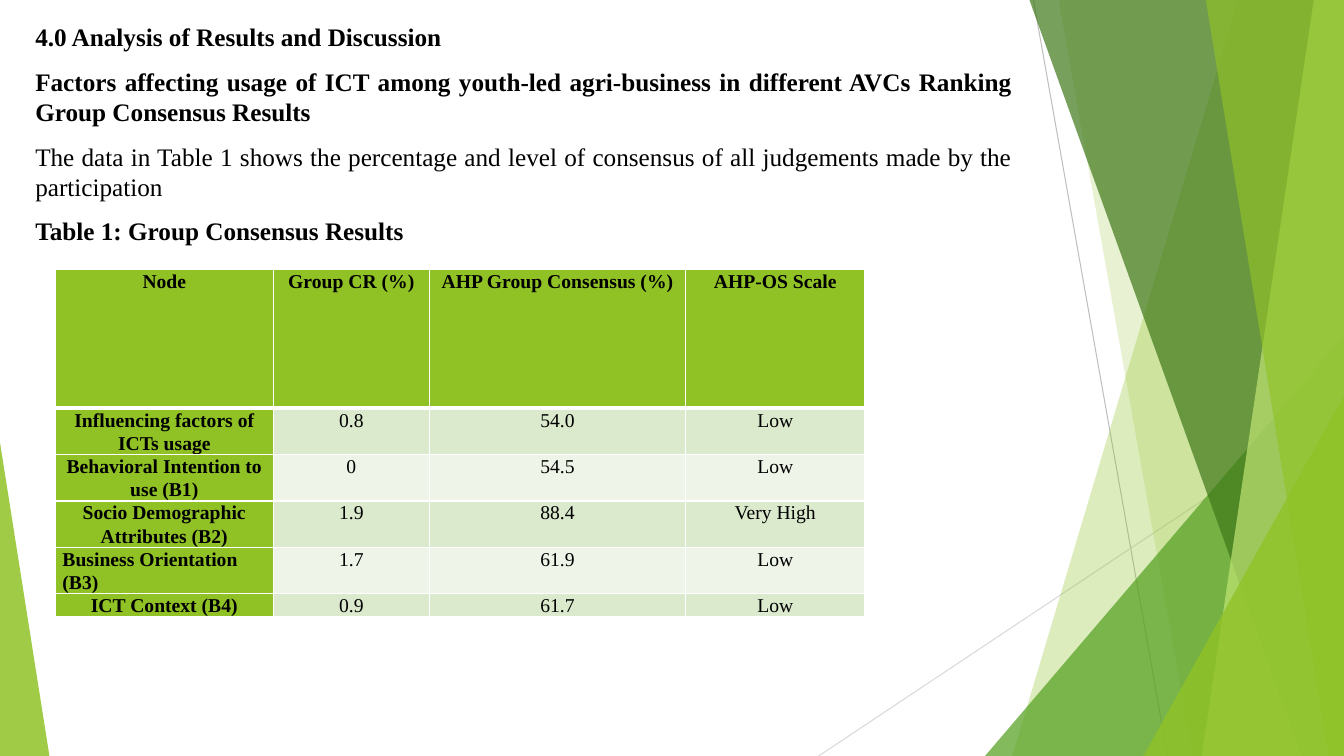
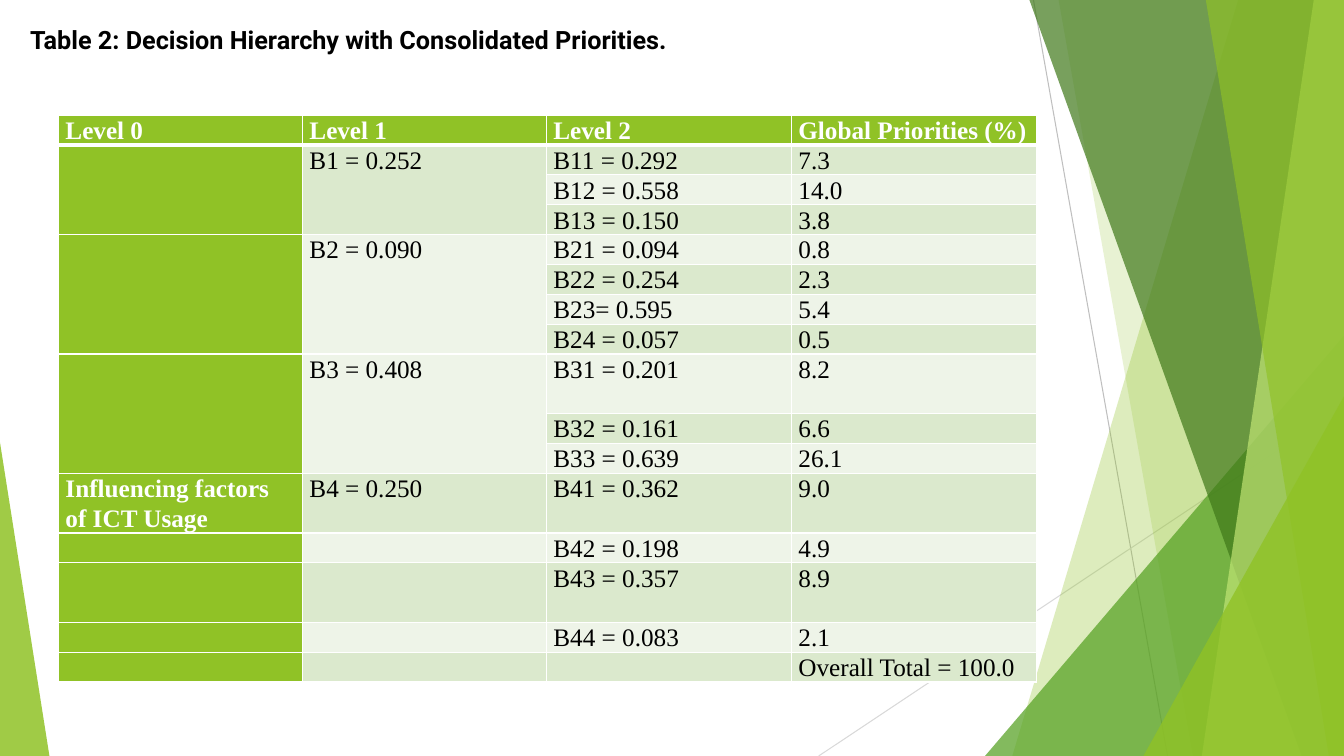
from lxml import etree
from pptx import Presentation
from pptx.dml.color import RGBColor
from pptx.enum.shapes import MSO_CONNECTOR, MSO_SHAPE
from pptx.enum.text import MSO_ANCHOR, MSO_AUTO_SIZE, PP_ALIGN
from pptx.oxml.ns import qn
from pptx.util import Inches, Pt

WIDTH, HEIGHT = 13.33, 7.5
SERIF, SANS = "Times New Roman", "Roboto"
BLACK, WHITE, LIME = "000000", "FFFFFF", "90C226"
BANDS = ["EEF4E8", "DBE9CD"]  # even rows, odd rows

# Thin lines: start, end, colour
RAYS = [
    ((10.25, 0), (11.58, HEIGHT), "BFBFBF"),
    ((WIDTH, 4.03), (8.12, HEIGHT), "D9D9D9"),
]
# Facets from back to front. A sheet has the x of its left edge at top and
# bottom and runs to the right side; a wedge has left, top, width, apex.
FACETS = [
    ("sheet", (12.28, 10.04), LIME, 30),
    ("sheet", (10.5, 11.83), LIME, 20),
    ("wedge", (9.77, 3.33, 3.56, 1), "54A021", 72),
    ("sheet", (10.21, 12.91), "3F7819", 70),
    ("sheet", (13.03, 11.92), "C0E474", 70),
    ("sheet", (11.96, 13.18), LIME, 65),
    ("wedge", (11.34, 3.93, 1.99, 1), LIME, 80),
    ("wedge", (0, 4.39, 0.49, 0), LIME, 85),
]

CONSENSUS_TITLE = "4.0 Analysis of Results and Discussion"
CONSENSUS_TEXT = [  # text, bold
    ("Factors affecting usage of ICT among youth-led agri-business in different "
     "AVCs Ranking Group Consensus Results", True),
    ("The data in Table 1 shows the percentage and level of consensus of all "
     "judgements made by the participation", False),
    ("Table 1: Group Consensus Results", True),
]
CONSENSUS = [
    ("Node", "Group CR (%)", "AHP Group Consensus (%)", "AHP-OS Scale"),
    ("Influencing factors of ICTs usage", "0.8", "54.0", "Low"),
    ("Behavioral Intention to use (B1)", "0", "54.5", "Low"),
    ("Socio Demographic Attributes (B2)", "1.9", "88.4", "Very High"),
    ("Business Orientation (B3)", "1.7", "61.9", "Low"),
    ("ICT Context (B4)", "0.9", "61.7", "Low"),
]
CONSENSUS_HEIGHTS = [1.38] + [0.46] * 4 + [0.23]

PRIORITIES_TITLE = "Table 2: Decision Hierarchy with Consolidated Priorities."
PRIORITIES = [
    ("Level 0", "Level 1", "Level 2", "Global Priorities (%)"),
    ("", "B1 = 0.252", "B11 = 0.292", "7.3"),
    ("", "", "B12 = 0.558", "14.0"),
    ("", "", "B13 = 0.150", "3.8"),
    ("", "B2 = 0.090", "B21 = 0.094", "0.8"),
    ("", "", "B22 = 0.254", "2.3"),
    ("", "", "B23= 0.595", "5.4"),
    ("", "", "B24 = 0.057", "0.5"),
    ("", "B3 = 0.408", "B31 = 0.201", "8.2"),
    ("", "", "B32 = 0.161", "6.6"),
    ("", "", "B33 = 0.639", "26.1"),
    ("Influencing factors of ICT Usage", "B4 = 0.250", "B41 = 0.362", "9.0"),
    ("", "", "B42 = 0.198", "4.9"),
    ("", "", "B43 = 0.357", "8.9"),
    ("", "", "B44 = 0.083", "2.1"),
    ("", "", "", "Overall Total = 100.0"),
]
TALL_ROWS = {8, 11, 13}
PRIORITIES_HEIGHTS = [0.59 if i in TALL_ROWS else 0.29 for i in range(len(PRIORITIES))]
MERGED_ROWS = [(1, 3), (4, 7), (8, 10)]


def rgb(color):
    return RGBColor.from_string(color)


def place(shape, left, top, width, height):
    shape.left, shape.top = Inches(left), Inches(top)
    shape.width, shape.height = Inches(width), Inches(height)


def format_paragraph(p, size, font, color, bold, align):
    p.font.size, p.font.name, p.font.bold = Pt(size), font, bold
    p.font.color.rgb = rgb(color)
    p.alignment = align


def add_ray(shapes, start, end, color):
    line = shapes.add_connector(MSO_CONNECTOR.STRAIGHT, *map(Inches, start + end))
    line.line.color.rgb = rgb(color)
    line.line.width = Pt(0.75)
    etree.SubElement(line._element.spPr, qn("a:effectLst"))
    return line


def add_facet(shapes, kind, geometry, color, opacity):
    if kind == "sheet":
        top_x, bottom_x = geometry
        corners = [(WIDTH, 0), (WIDTH, HEIGHT), (bottom_x, HEIGHT)]
        outline = shapes.build_freeform(Inches(top_x), 0)
        outline.add_line_segments([(Inches(x), Inches(y)) for x, y in corners])
        facet = outline.convert_to_shape()
    else:
        left, top, width, apex = geometry
        facet = shapes.add_shape(MSO_SHAPE.ISOSCELES_TRIANGLE, Inches(left), Inches(top),
                                 Inches(width), Inches(HEIGHT - top))
        facet.adjustments[0] = apex
    facet.shadow.inherit = False
    facet.line.fill.background()
    facet.fill.solid()
    facet.fill.fore_color.rgb = rgb(color)
    fill_color = facet._element.spPr.find(f"{qn('a:solidFill')}/{qn('a:srgbClr')}")
    etree.SubElement(fill_color, qn("a:alpha"), val=str(opacity * 1000))
    return facet


def decorate_master(prs, s):
    """Draw the backdrop on a slide, then move it behind the master's placeholders."""
    backdrop = [add_ray(s.shapes, *ray) for ray in RAYS]
    backdrop += [add_facet(s.shapes, *facet) for facet in FACETS]
    tree = prs.slide_master.shapes.element
    for i, shape in enumerate(backdrop):
        shape._element.xpath(".//p:cNvPr")[0].set("id", str(100 + i))
        tree.insert(2 + i, shape._element)


def set_title(s, text, box, font, align):
    place(s.shapes.title, *box)
    tf = s.shapes.title.text_frame
    tf.text = text
    tf.vertical_anchor, tf.auto_size = MSO_ANCHOR.TOP, MSO_AUTO_SIZE.NONE
    format_paragraph(tf.paragraphs[0], 18, font, BLACK, True, align)


def set_body(s, paragraphs, box):
    body = s.placeholders[1]
    place(body, *box)
    tf = body.text_frame
    tf.auto_size = MSO_AUTO_SIZE.NONE
    tf.text = "\n".join(text for text, _ in paragraphs)
    for i, (p, (_, bold)) in enumerate(zip(tf.paragraphs, paragraphs)):
        p.space_before = Pt(10 if i else 0)
        format_paragraph(p, 18, SERIF, BLACK, bold, PP_ALIGN.JUSTIFY)
        pPr = p._p.get_or_add_pPr()
        pPr.set("marL", "0")
        pPr.set("indent", "0")
        pPr.insert_element_before(etree.Element(qn("a:buNone")), "a:tabLst", "a:defRPr", "a:extLst")


def set_borders(cell, is_header):
    tcPr = cell._tc.get_or_add_tcPr()
    for i, side in enumerate(("lnL", "lnR", "lnT", "lnB")):
        width = Pt(3 if is_header and side == "lnB" else 1)
        ln = etree.Element(qn(f"a:{side}"), w=str(width))
        fill = etree.SubElement(ln, qn("a:solidFill"))
        etree.SubElement(fill, qn("a:srgbClr"), val=WHITE)
        tcPr.insert(i, ln)


def add_grid(s, rows, left, top, widths, heights, size, head_color, align):
    frame = s.shapes.add_table(len(rows), len(widths), Inches(left), Inches(top),
                               Inches(sum(widths)), Inches(sum(heights)))
    table = frame.table
    for column, width in zip(table.columns, widths):
        column.width = Inches(width)
    for r, (row, height) in enumerate(zip(rows, heights)):
        table.rows[r].height = Inches(height)
        for c, text in enumerate(row):
            cell = table.cell(r, c)
            is_head = r == 0 or c == 0
            cell.margin_left = cell.margin_right = Inches(0.07)
            cell.margin_top = cell.margin_bottom = 0
            cell.fill.solid()
            cell.fill.fore_color.rgb = rgb(LIME if is_head else BANDS[r % 2])
            set_borders(cell, r == 0)
            cell.text = text
            p = cell.text_frame.paragraphs[0]
            p.line_spacing = 1.07
            format_paragraph(p, size, SERIF, head_color if is_head else BLACK, is_head, align)
    return table


def main():
    prs = Presentation()
    prs.slide_width, prs.slide_height = Inches(WIDTH), Inches(HEIGHT)

    s = prs.slides.add_slide(prs.slide_layouts.get_by_name("Title and Content"))
    decorate_master(prs, s)
    set_title(s, CONSENSUS_TITLE, (0.25, 0.16, 9.89, 0.45), SERIF, PP_ALIGN.JUSTIFY)
    set_body(s, CONSENSUS_TEXT, (0.25, 0.61, 9.89, 2))
    table = add_grid(s, CONSENSUS, 0.55, 2.67, [2.16, 1.55, 2.54, 1.78], CONSENSUS_HEIGHTS,
                     14, BLACK, PP_ALIGN.CENTER)
    table.cell(4, 0).text_frame.paragraphs[0].alignment = PP_ALIGN.LEFT

    s = prs.slides.add_slide(prs.slide_layouts.get_by_name("Title Only"))
    set_title(s, PRIORITIES_TITLE, (0.2, 0.19, 12.86, 0.5), SANS, PP_ALIGN.LEFT)
    table = add_grid(s, PRIORITIES, 0.58, 1.14, [2.42, 2.42, 2.43, 2.43], PRIORITIES_HEIGHTS,
                     18, WHITE, PP_ALIGN.LEFT)
    for first, last in MERGED_ROWS:
        for c in (0, 1):
            table.cell(first, c).merge(table.cell(last, c))

    prs.save("out.pptx")


if __name__ == "__main__":
    main()
